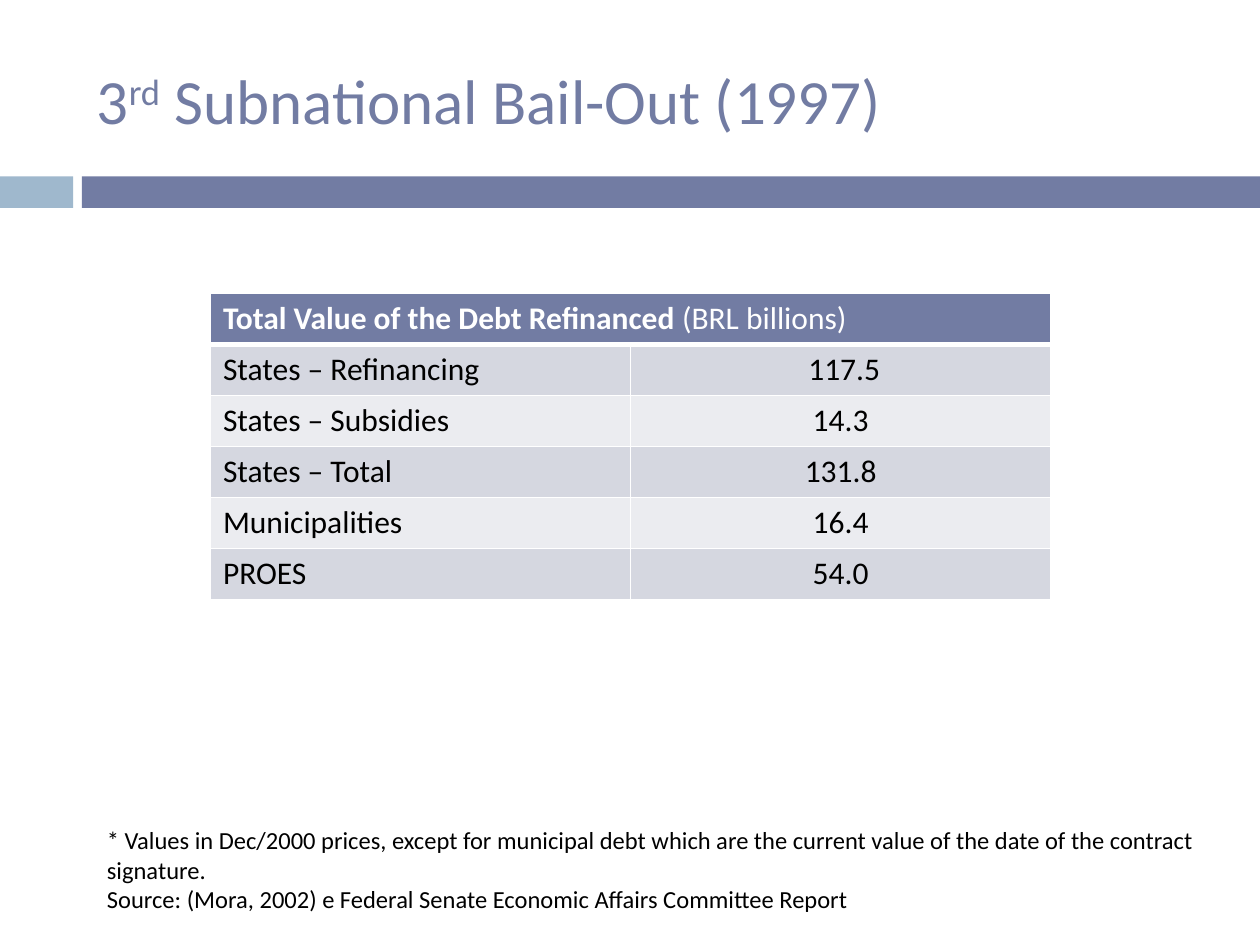
from dataclasses import dataclass

from lxml import etree
from pptx import Presentation
from pptx.dml.color import RGBColor
from pptx.enum.shapes import MSO_SHAPE
from pptx.enum.text import MSO_ANCHOR, PP_ALIGN
from pptx.oxml.ns import qn
from pptx.util import Inches, Pt

RECTANGLE = MSO_SHAPE.RECTANGLE
MIDDLE, TOP = MSO_ANCHOR.MIDDLE, MSO_ANCHOR.TOP
LEFT, CENTER = PP_ALIGN.LEFT, PP_ALIGN.CENTER


@dataclass(frozen=True)
class Theme:
    """Colours, font and type sizes of the deck."""
    font: str = "Calibri"
    accent: str = "727CA3"
    light_accent: str = "9FB8CD"
    band_dark: str = "D5D7E0"
    band_light: str = "EBECF0"
    white: str = "FFFFFF"
    black: str = "000000"
    title_size: int = 36
    table_size: int = 18
    note_size: int = 14


THEME = Theme()

DEBT_ROWS = [
    ("States – Refinancing", " 117.5"),
    ("States – Subsidies", "14.3"),
    ("States – Total", "131.8"),
    ("Municipalities", "16.4"),
    ("PROES", "54.0"),
]

NOTES = [
    "* Values in Dec/2000 prices, except for municipal debt which are the "
    "current value of the date of the contract signature.",
    "Source: (Mora, 2002) e Federal Senate Economic Affairs Committee Report",
]


def add_span(para, text, size, color, bold=False):
    """Append one formatted run to a paragraph."""
    span = para.add_run()
    span.text = text
    span.font.name = THEME.font
    span.font.size = Pt(size)
    span.font.bold = bold
    span.font.color.rgb = RGBColor.from_string(color)
    return span


def add_text_box(page, box, anchor):
    """Add an empty wrapping text box and return its frame."""
    frame = page.shapes.add_textbox(*map(Inches, box)).text_frame
    frame.word_wrap = True
    frame.vertical_anchor = anchor
    return frame


def add_title(page, box):
    """Write the title with its raised ordinal ending."""
    para = add_text_box(page, box, MIDDLE).paragraphs[0]
    add_span(para, "3", THEME.title_size, THEME.accent)
    ordinal = add_span(para, "rd", THEME.title_size, THEME.accent)
    ordinal.font._element.set("baseline", "30000")
    add_span(para, " Subnational Bail-Out (1997)", THEME.title_size, THEME.accent)


def add_divider(page, box, tab_width, gap):
    """Draw the short tab and the long bar under the title."""
    left, top, width, height = box
    bar_offset = tab_width + gap
    parts = [
        (left, tab_width, THEME.light_accent),
        (left + bar_offset, width - bar_offset, THEME.accent),
    ]
    for part_left, part_width, color in parts:
        bar = page.shapes.add_shape(
            RECTANGLE, *map(Inches, (part_left, top, part_width, height)))
        bar.shadow.inherit = False
        bar.fill.solid()
        bar.fill.fore_color.rgb = RGBColor.from_string(color)
        bar.line.fill.background()


def style_cell(cell, color, bottom_width=1):
    """Fill a cell and give it white borders."""
    cell.fill.solid()
    cell.fill.fore_color.rgb = RGBColor.from_string(color)
    properties = cell._tc.get_or_add_tcPr()
    widths = {"a:lnL": 1, "a:lnR": 1, "a:lnT": 1, "a:lnB": bottom_width}
    for index, (tag, width) in enumerate(widths.items()):
        line = etree.Element(qn(tag), w=str(Pt(width)))
        fill = etree.SubElement(line, qn("a:solidFill"))
        etree.SubElement(fill, qn("a:srgbClr"), val=THEME.white)
        properties.insert(index, line)


def add_debt_table(page, box):
    """Build the debt table with a merged heading and banded rows."""
    row_count = len(DEBT_ROWS) + 1
    table = page.shapes.add_table(row_count, 2, *map(Inches, box)).table
    for row in table.rows:
        row.height = Inches(box[3] / row_count)

    heading = table.cell(0, 0)
    heading.merge(table.cell(0, 1))
    for column in range(2):
        style_cell(table.cell(0, column), THEME.accent, bottom_width=3)
    para = heading.text_frame.paragraphs[0]
    add_span(para, "Total Value of the Debt Refinanced ",
             THEME.table_size, THEME.white, bold=True)
    add_span(para, "(BRL billions)", THEME.table_size, THEME.white)

    for row_index, values in enumerate(DEBT_ROWS, start=1):
        band = THEME.band_dark if row_index % 2 else THEME.band_light
        for column, (text, alignment) in enumerate(zip(values, (LEFT, CENTER))):
            cell = table.cell(row_index, column)
            style_cell(cell, band)
            para = cell.text_frame.paragraphs[0]
            para.alignment = alignment
            add_span(para, text, THEME.table_size, THEME.black)


def add_notes(page, box):
    """Write the footnote and the source line."""
    frame = add_text_box(page, box, TOP)
    for index, text in enumerate(NOTES):
        para = frame.add_paragraph() if index else frame.paragraphs[0]
        add_span(para, text, THEME.note_size, THEME.black)


def main():
    """Build the slide and save the deck."""
    deck = Presentation()
    deck.slide_width, deck.slide_height = Inches(10), Inches(7.5)
    page = deck.slides.add_slide(deck.slide_layouts[6])
    add_divider(page, (0, 1.4, 10, 0.25), tab_width=0.58, gap=0.07)
    add_title(page, (0.67, 0.25, 8.92, 1.08))
    add_debt_table(page, (1.67, 2.33, 6.67, 2.43))
    add_notes(page, (0.75, 6.5, 8.83, 0.81))
    deck.save("out.pptx")


if __name__ == "__main__":
    main()
